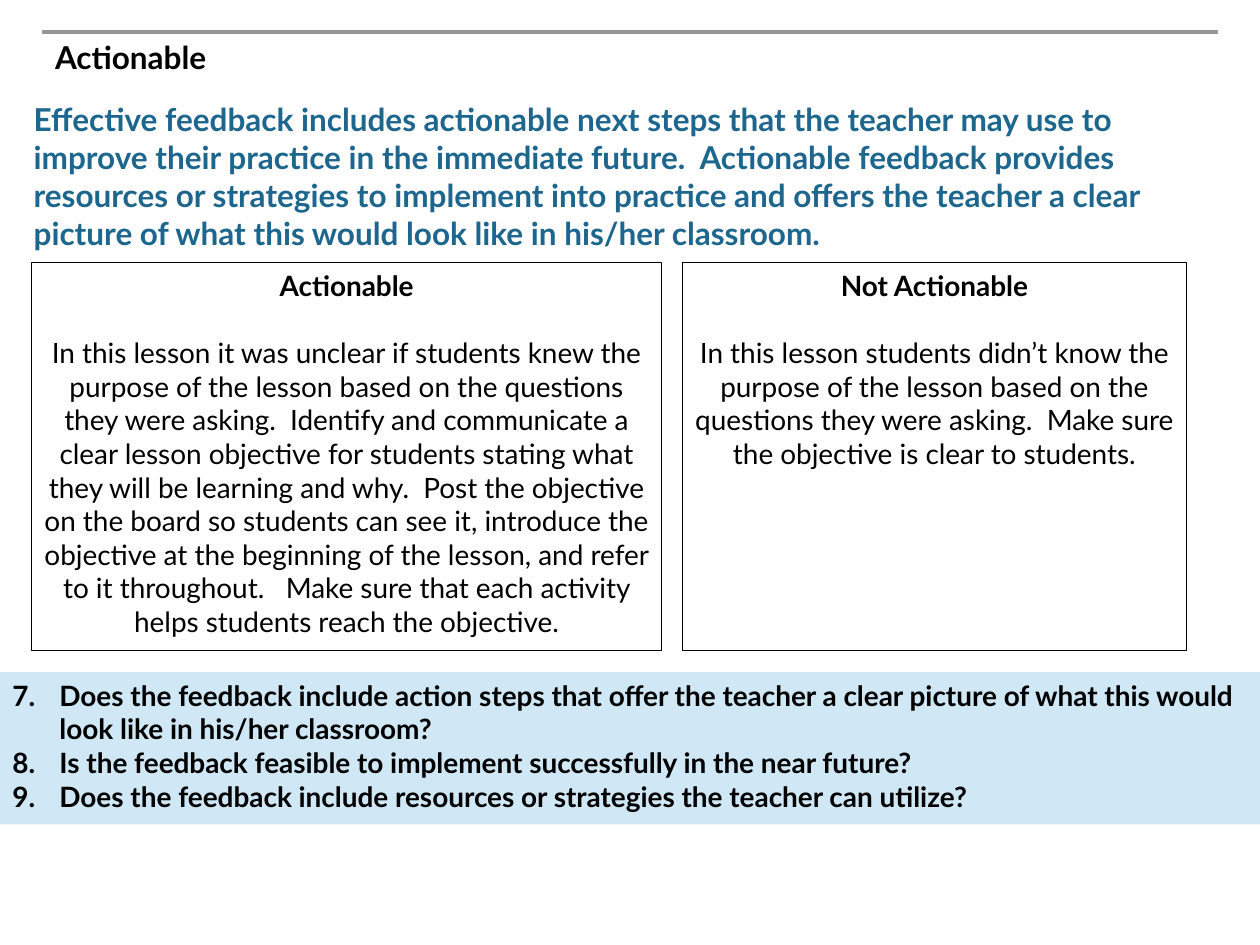
from lxml.etree import SubElement
from pptx import Presentation
from pptx.dml.color import RGBColor
from pptx.enum.shapes import MSO_CONNECTOR, MSO_SHAPE
from pptx.enum.text import MSO_ANCHOR, PP_ALIGN
from pptx.oxml.ns import qn
from pptx.util import Cm, Pt

TITLE = "Actionable"
LEAD = (
    "Effective feedback includes actionable next steps that the teacher may use to "
    "improve their practice in the immediate future.  Actionable feedback provides "
    "resources or strategies to implement into practice and offers the teacher a clear "
    "picture of what this would look like in his/her classroom."
)
CARDS = [
    (12.7, "Actionable",
     "In this lesson it was unclear if students knew the purpose of the lesson based on "
     "the questions they were asking.  Identify and communicate a clear lesson objective "
     "for students stating what they will be learning and why.  Post the objective on the "
     "board so students can see it, introduce the objective at the beginning of the "
     "lesson, and refer to it throughout.   Make sure that each activity helps students "
     "reach the objective."),
    (10.16, "Not Actionable",
     "In this lesson students didn’t know the purpose of the lesson based on the questions "
     "they were asking.  Make sure the objective is clear to students."),
]
CHECKS = [
    "Does the feedback include action steps that offer the teacher a clear picture of "
    "what this would look like in his/her classroom?",
    "Is the feedback feasible to implement successfully in the near future?",
    "Does the feedback include resources or strategies the teacher can utilize?",
]
FIRST = 7
LEFT, GAP = 0.64, 0.42
BLACK, WHITE, GREY, BLUE, PALE = "000000", "FFFFFF", "969696", "1D668D", "D0E8F5"


def tint(code):
    return RGBColor.from_string(code)


def style(para, size, color=BLACK, bold=True, align=PP_ALIGN.LEFT):
    para.alignment = align
    font = para.font
    font.name, font.size, font.bold = "Lato", Pt(size), bold
    font.color.rgb = tint(color)


def write(frame, lines):
    frame.word_wrap = True
    frame.vertical_anchor = MSO_ANCHOR.TOP
    frame.text = "\n".join(lines)
    return frame.paragraphs


def add_text(slide, place, text, color):
    box = slide.shapes.add_textbox(*map(Cm, place))
    style(write(box.text_frame, [text])[0], 18, color)


def add_box(slide, place, fill, edge=None):
    box = slide.shapes.add_shape(MSO_SHAPE.RECTANGLE, *map(Cm, place))
    box.shadow.inherit = False
    box.fill.solid()
    box.fill.fore_color.rgb = tint(fill)
    if edge:
        box.line.color.rgb = tint(edge)
        box.line.width = Pt(0.75)
    else:
        box.line.fill.background()
    return box.text_frame


def number(para, start):
    props = para._p.get_or_add_pPr()
    props.set("marL", str(Cm(0.95)))
    props.set("indent", str(-Cm(0.95)))
    SubElement(props, qn("a:buFont"), typeface="+mj-lt")
    SubElement(props, qn("a:buAutoNum"), type="arabicPeriod", startAt=str(start))


def main():
    deck = Presentation()
    deck.slide_width, deck.slide_height = Cm(25.4), Cm(19.05)
    slide = deck.slides.add_slide(deck.slide_layouts[6])

    rule = slide.shapes.add_connector(
        MSO_CONNECTOR.STRAIGHT, Cm(0.85), Cm(0.64), Cm(24.55), Cm(0.64))
    rule.line.color.rgb = tint(GREY)
    rule.line.width = Pt(2)
    SubElement(rule._element.spPr, qn("a:effectLst"))

    add_text(slide, (0.86, 0.64, 23.67, 2.34), TITLE, BLACK)
    add_text(slide, (0.43, 1.9, 24.56, 4.11), LEAD, BLUE)

    left = LEFT
    for width, head, body in CARDS:
        frame = add_box(slide, (left, 5.29, width, 7.83), WHITE, BLACK)
        top, main_text = write(frame, [head, body])
        style(top, 16, align=PP_ALIGN.CENTER)
        style(main_text, 16, bold=False, align=PP_ALIGN.CENTER)
        main_text.space_before = Pt(19.2)
        left += width + GAP

    frame = add_box(slide, (0, 13.55, 25.4, 3.07), PALE)
    for para in write(frame, CHECKS):
        number(para, FIRST)
        style(para, 16)

    deck.save("out.pptx")


if __name__ == "__main__":
    main()
